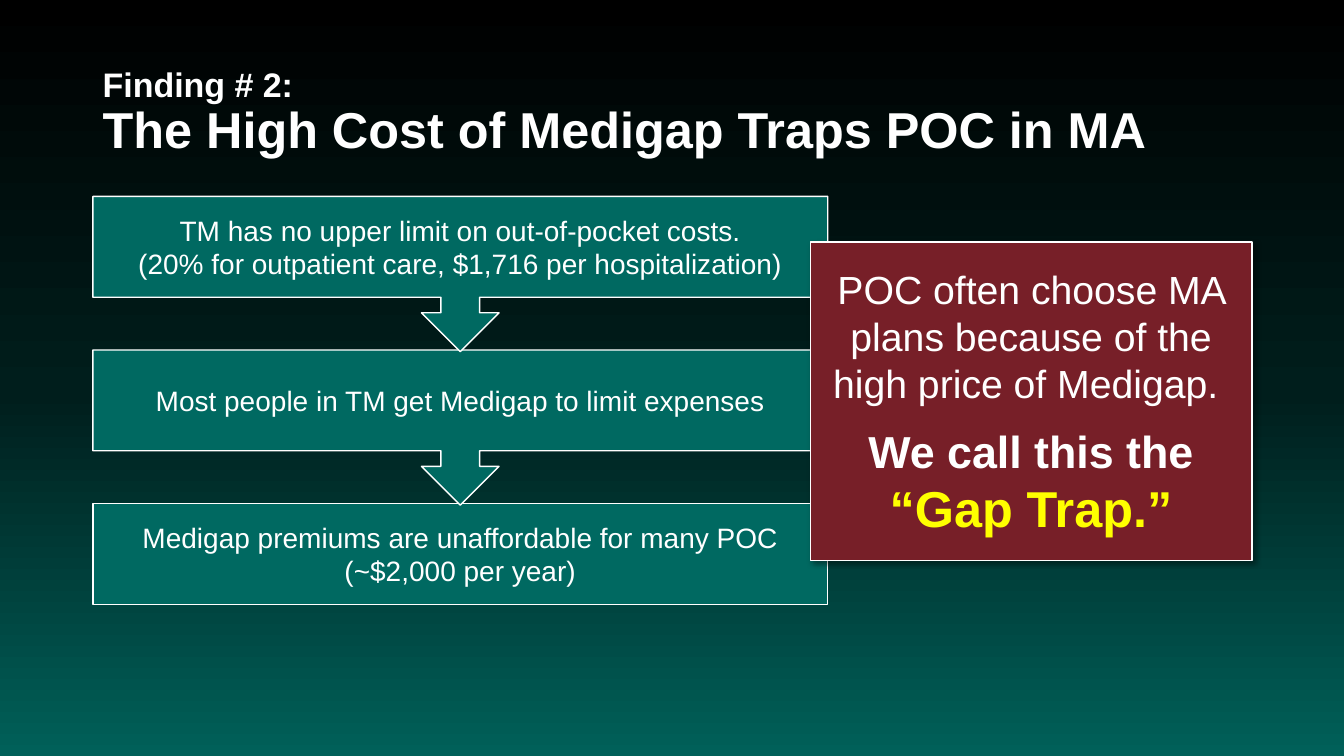
from copy import deepcopy

from lxml import etree
from pptx import Presentation
from pptx.dml.color import RGBColor
from pptx.enum.shapes import MSO_SHAPE
from pptx.enum.text import MSO_ANCHOR, PP_ALIGN
from pptx.oxml.ns import qn
from pptx.util import Cm, Pt

RECTANGLE = MSO_SHAPE.RECTANGLE
ARROW_CALLOUT = MSO_SHAPE.DOWN_ARROW_CALLOUT
MIDDLE = MSO_ANCHOR.MIDDLE
LEFT, CENTER = PP_ALIGN.LEFT, PP_ALIGN.CENTER

WHITE = RGBColor(0xFF, 0xFF, 0xFF)
BLACK = RGBColor(0x00, 0x00, 0x00)
YELLOW = RGBColor(0xFF, 0xFF, 0x00)
TEAL = RGBColor(0x00, 0x69, 0x61)
MAROON = RGBColor(0x77, 0x1F, 0x28)
BACKGROUND_STOPS = [
    (0, BLACK),
    (0.52, RGBColor(0x00, 0x1E, 0x1C)),
    (1, RGBColor(0x00, 0x60, 0x59)),
]

MARGIN = 2.34
STEP_WIDTH, STEP_HEIGHT, CALLOUT_HEIGHT = 18.52, 2.54, 3.91
STEP_TOP, STEP_PITCH = 4.95, 3.87
STEPS = [
    ["TM has no upper limit on out-of-pocket costs.",
     "(20% for outpatient care, $1,716 per hospitalization)"],
    ["Most people in TM get Medigap to limit expenses"],
    ["Medigap premiums are unaffordable for many POC",
     "(~$2,000 per year)"],
]


def add_run(paragraph, text, *, size, color=WHITE, bold=False, font="Arial"):
    run = paragraph.add_run()
    run.text = text
    run.font.name = font
    run.font.size = Pt(size)
    run.font.bold = bold
    run.font.color.rgb = color


class FindingSlide:
    def __init__(self, presentation):
        self.slide = presentation.slides.add_slide(presentation.slide_layouts[6])

    def background(self, stops):
        fill = self.slide.background.fill
        fill.gradient()
        fill.gradient_angle = 270
        stop_list = self.slide.element.find(".//" + qn("a:gsLst"))
        stop_list.insert(1, deepcopy(stop_list[0]))
        for stop, (position, color) in zip(fill.gradient_stops, stops):
            stop.position = position
            stop.color.rgb = color

    def paragraphs(self, frame, count, align, inset=None):
        """Prepare the frame and return its empty paragraphs."""
        frame.word_wrap = True
        frame.vertical_anchor = MIDDLE
        if inset:
            frame.margin_left = frame.margin_right = Cm(inset)
            frame.margin_top = frame.margin_bottom = Cm(inset)
        for _ in range(count - 1):
            frame.add_paragraph()
        for paragraph in frame.paragraphs:
            paragraph.alignment = align
        return frame.paragraphs

    def title(self, kicker, headline):
        box = self.slide.shapes.add_textbox(Cm(MARGIN), Cm(1.02), Cm(29.21), Cm(3.68))
        (paragraph,) = self.paragraphs(box.text_frame, 1, LEFT)
        paragraph.line_spacing = 0.9
        add_run(paragraph, kicker, size=24.3, bold=True)
        paragraph.add_line_break()
        add_run(paragraph, headline, size=36, bold=True)

    def panel(self, kind, left, top, width, height, fill):
        panel = self.slide.shapes.add_shape(kind, Cm(left), Cm(top), Cm(width), Cm(height))
        panel.shadow.inherit = False
        panel.fill.solid()
        panel.fill.fore_color.rgb = fill
        panel.line.color.rgb = WHITE
        panel.line.width = Pt(1)
        return panel

    def step(self, index, lines, is_last):
        kind, height = (RECTANGLE, STEP_HEIGHT) if is_last else (ARROW_CALLOUT, CALLOUT_HEIGHT)
        top = STEP_TOP + index * STEP_PITCH
        panel = self.panel(kind, MARGIN, top, STEP_WIDTH, height, TEAL)
        paragraphs = self.paragraphs(panel.text_frame, len(lines), CENTER, inset=0.4)
        for paragraph, line in zip(paragraphs, lines):
            add_run(paragraph, line, size=20)

    def conclusion(self):
        panel = self.panel(RECTANGLE, 20.42, 6.1, 11.13, 8.03, MAROON)
        self.drop_shadow(panel)
        reason, name = self.paragraphs(panel.text_frame, 2, CENTER)
        reason.space_after = Pt(12)
        add_run(reason, "POC often choose MA plans because of the high price of Medigap. ", size=28)
        add_run(name, "We call this the ", size=32, bold=True)
        add_run(name, "“Gap Trap.”", size=36, bold=True, color=YELLOW)

    def drop_shadow(self, shape):
        effects = shape.element.spPr.find(qn("a:effectLst"))
        shadow = etree.SubElement(
            effects, qn("a:outerShdw"), blurRad=str(Pt(4)), dist=str(Pt(3)),
            dir="2700000", algn="tl", rotWithShape="0")
        color = etree.SubElement(shadow, qn("a:srgbClr"), val=str(BLACK))
        etree.SubElement(color, qn("a:alpha"), val="40000")


def main():
    presentation = Presentation()
    presentation.slide_width, presentation.slide_height = Cm(33.87), Cm(19.05)
    finding = FindingSlide(presentation)
    finding.background(BACKGROUND_STOPS)
    finding.title("Finding # 2:", "The High Cost of Medigap Traps POC in MA")
    # Bottom step first, so that each arrow tip lies over the step below it
    for index in reversed(range(len(STEPS))):
        finding.step(index, STEPS[index], is_last=index == len(STEPS) - 1)
    finding.conclusion()
    presentation.save("out.pptx")


if __name__ == "__main__":
    main()
